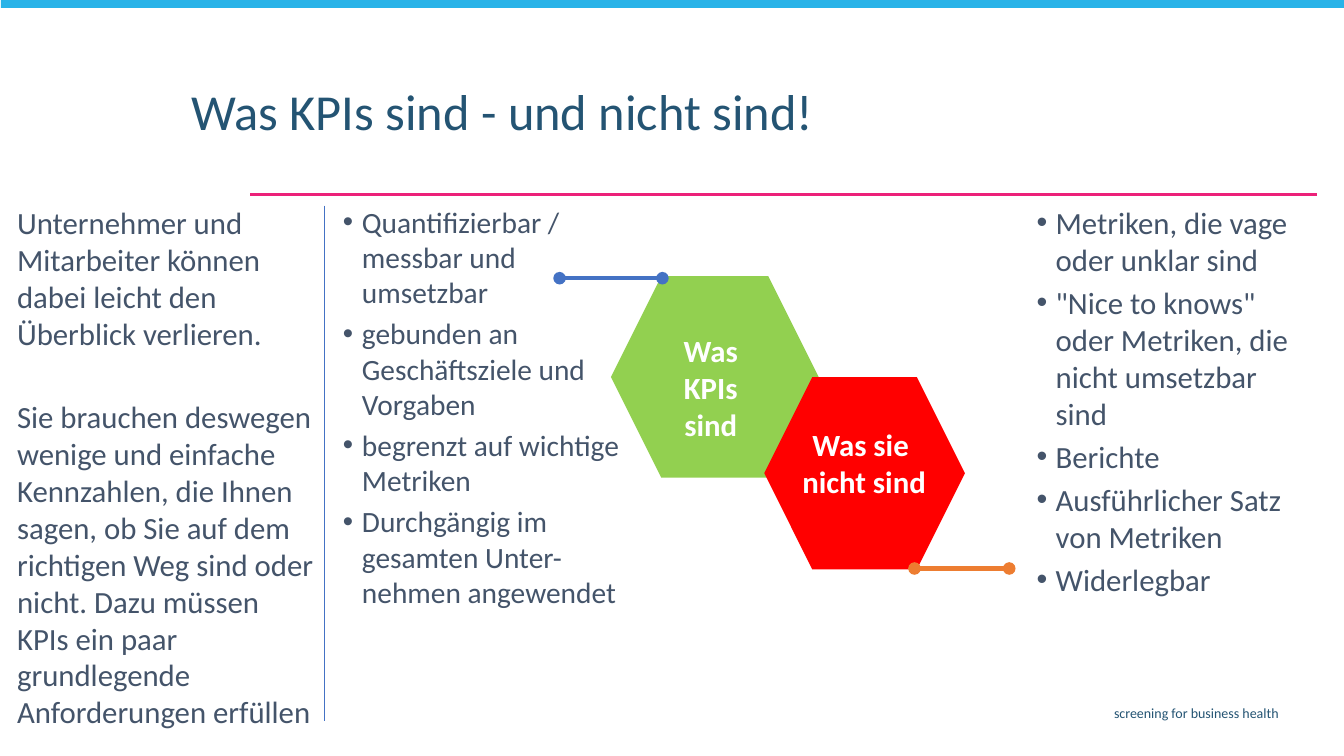
"""Build a slide that contrasts what KPIs are with what they are not."""
from lxml import etree
from pptx import Presentation
from pptx.dml.color import RGBColor
from pptx.enum.shapes import MSO_CONNECTOR, MSO_SHAPE
from pptx.enum.text import MSO_ANCHOR, PP_ALIGN
from pptx.oxml.ns import qn
from pptx.util import Inches, Pt

STRAIGHT = MSO_CONNECTOR.STRAIGHT
RECTANGLE, HEXAGON = MSO_SHAPE.RECTANGLE, MSO_SHAPE.HEXAGON
TOP, MIDDLE = MSO_ANCHOR.TOP, MSO_ANCHOR.MIDDLE
LEFT, CENTER, RIGHT = PP_ALIGN.LEFT, PP_ALIGN.CENTER, PP_ALIGN.RIGHT

FONT = "Calibri"
NAVY, SLATE, WHITE = "245473", "44546A", "FFFFFF"
BLUE, ORANGE = "4472C4", "ED7D31"
COLUMN_TOP = 1.98
INDENT = 0.19

SHAPES = [
    (RECTANGLE, (0.01, -0.02, 13.34, 0.1), "29B3E8"),
    (HEXAGON, (6.06, 2.74, 2.06, 2), "92D050"),
    (HEXAGON, (7.58, 3.74, 1.99, 1.91), "FF0000"),
]
LINES = [
    ((13.06, 1.93), (2.48, 1.93), "EC2179", 1.5, False),
    ((6.57, 2.76), (5.55, 2.76), BLUE, 3, True),
    ((10.01, 5.64), (9.07, 5.64), ORANGE, 3, True),
    ((3.22, 2.04), (3.22, 7.15), BLUE, 0.5, False),
]
TITLE = "Was KPIs sind - und nicht sind!"
FOOTER = "screening for business health"
HEXAGON_LABELS = [
    ("Was sie \vnicht sind", (7.71, 4.17, 1.72, 0.84)),
    ("Was KPIs\vsind", (6.4, 3.42, 1.3, 0.84)),
]
INTRO = [
    "Unternehmer und Mitarbeiter können dabei leicht den Überblick verlieren.",
    "Sie brauchen deswegen wenige und einfache Kennzahlen, die Ihnen sagen, ob Sie "
    "auf dem richtigen Weg sind oder nicht. Dazu müssen KPIs ein paar grundlegende "
    "Anforderungen erfüllen",
]
KPIS_ARE = [
    "Quantifizierbar / messbar und umsetzbar",
    "gebunden an Geschäftsziele und Vorgaben",
    "begrenzt auf wichtige Metriken",
    "Durchgängig im gesamten Unter-nehmen angewendet",
]
KPIS_ARE_NOT = [
    "Metriken, die vage oder unklar sind",
    '"Nice to knows" oder Metriken, die nicht umsetzbar sind',
    "Berichte",
    "Ausführlicher Satz von Metriken",
    "Widerlegbar",
]


def color(value):
    return RGBColor.from_string(value)


def add_filled(page, kind, place, fill):
    shape = page.shapes.add_shape(kind, *map(Inches, place))
    shape.shadow.inherit = False
    shape.fill.solid()
    shape.fill.fore_color.rgb = color(fill)
    shape.line.fill.background()


def add_line(page, start, end, stroke, width, dotted):
    line = page.shapes.add_connector(STRAIGHT, *map(Inches, start + end))
    line.line.color.rgb = color(stroke)
    line.line.width = Pt(width)
    properties = line._element.spPr
    if dotted:
        outline = properties.find(qn("a:ln"))
        for tag in ("a:headEnd", "a:tailEnd"):
            etree.SubElement(outline, qn(tag), type="oval")
    etree.SubElement(properties, qn("a:effectLst"))


def add_bullet(para):
    properties = para._p.get_or_add_pPr()
    properties.set("marL", str(Inches(INDENT)))
    properties.set("indent", str(-Inches(INDENT)))
    etree.SubElement(properties, qn("a:buFont"), typeface="Arial")
    etree.SubElement(properties, qn("a:buChar"), char="•")


def add_text(page, place, texts, size, ink, align=LEFT, anchor=TOP, bold=False,
             gap=0, bullets=False, spacing=1.0, inset=(0.1, 0.05)):
    box = page.shapes.add_textbox(*map(Inches, place))
    frame = box.text_frame
    frame.word_wrap = True
    frame.vertical_anchor = anchor
    frame.margin_left = frame.margin_right = Inches(inset[0])
    frame.margin_top = frame.margin_bottom = Inches(inset[1])
    for number, text in enumerate(texts):
        para = frame.add_paragraph() if number else frame.paragraphs[0]
        para.text = text
        para.alignment = align
        para.line_spacing = spacing
        if number:
            para.space_before = Pt(gap)
        if bullets:
            add_bullet(para)
        para.font.name = FONT
        para.font.size = Pt(size)
        para.font.bold = bold
        para.font.color.rgb = color(ink)


def add_column(page, left, width, height, texts, size, gap, bullets):
    add_text(page, (left, COLUMN_TOP, width, height), texts, size, SLATE,
             gap=gap, bullets=bullets, inset=(0.09, 0.04))


def main():
    deck = Presentation()
    deck.slide_width, deck.slide_height = Inches(13.33), Inches(7.5)
    page = deck.slides.add_slide(deck.slide_layouts[6])
    for shape in SHAPES:
        add_filled(page, *shape)
    for line in LINES:
        add_line(page, *line)
    add_text(page, (1.8, 0.81, 9.68, 0.76), [TITLE], 36, NAVY, spacing=0.9)
    add_text(page, (3.65, 6.94, 9.13, 0.29), [FOOTER], 10, NAVY, align=RIGHT)
    for label, place in HEXAGON_LABELS:
        add_text(page, place, [label], 22, WHITE, CENTER, MIDDLE, bold=True)
    add_column(page, 0.08, 3.16, 5.44, INTRO, 22, 33, False)
    add_column(page, 3.31, 3.16, 4.19, KPIS_ARE, 21, 4.2, True)
    add_column(page, 10.19, 2.69, 4.09, KPIS_ARE_NOT, 22, 4.4, True)
    deck.save("out.pptx")


if __name__ == "__main__":
    main()
